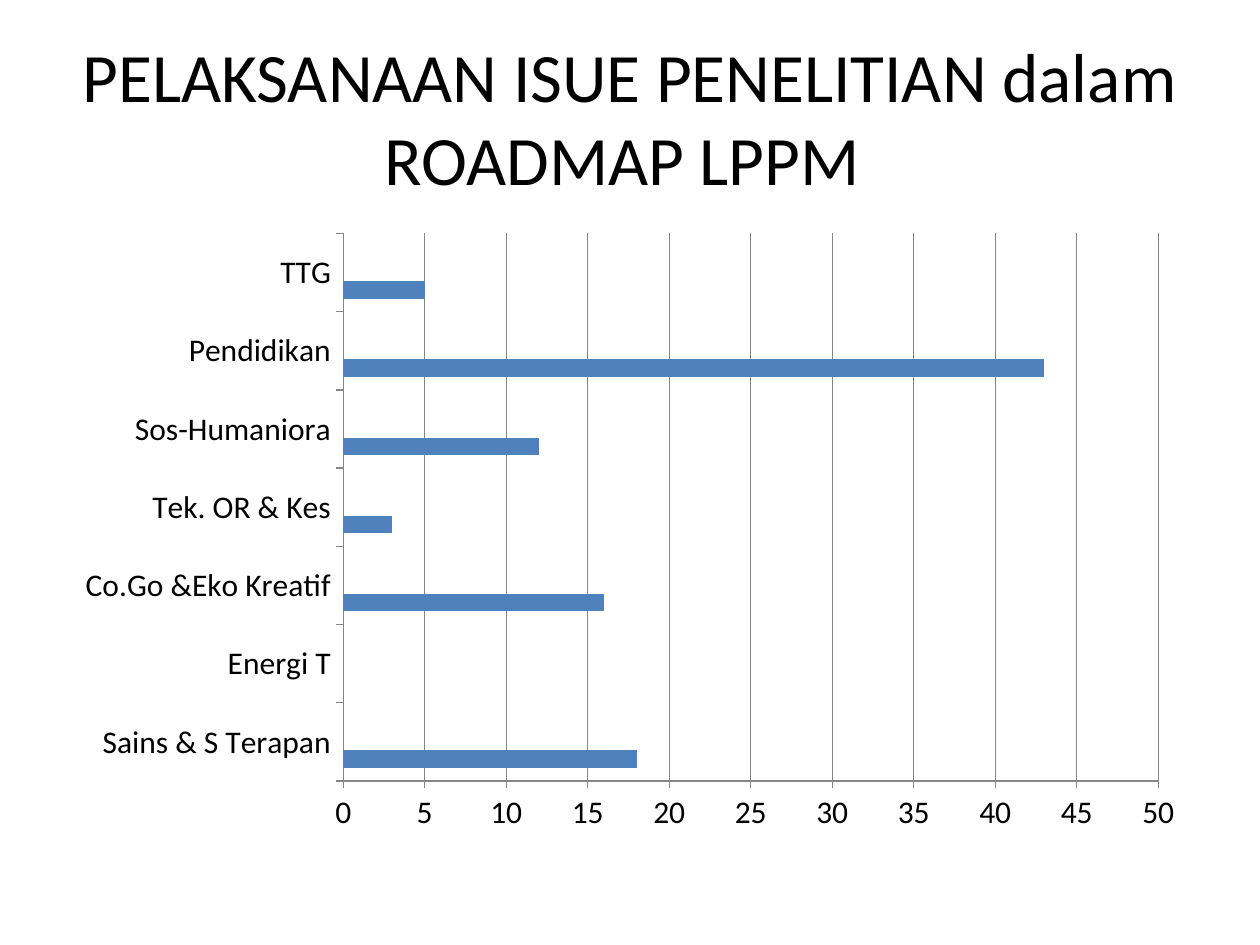
from typing import NamedTuple

import pptx
import pptx.chart.data
import pptx.dml.color
import pptx.enum.chart
import pptx.enum.text
import pptx.util

PX = 914400 // 126
FONT = "Calibri"
BLACK, GREY = "000000", "868686"


class Frame(NamedTuple):
    left: int
    top: int
    width: int
    height: int

    def emu(self) -> list[int]:
        return [length * PX for length in self]


class Issue(NamedTuple):
    label: str
    value: int


TITLE_FRAME = Frame(63, 38, 1134, 157)
CHART_FRAME = Frame(63, 221, 1134, 623)
ISSUES = [
    Issue("Sains & S Terapan", 18),
    Issue("Energi T", 0),
    Issue("Co.Go &Eko Kreatif", 16),
    Issue("Tek. OR & Kes", 3),
    Issue("Sos-Humaniora", 12),
    Issue("Pendidikan", 43),
    Issue("TTG", 5),
]
SERIES_COLOURS = ["4F81BD", "C0504D", "9BBB59"]


def colour(value: str) -> pptx.dml.color.RGBColor:
    return pptx.dml.color.RGBColor.from_string(value)


def style_font(font, size: float) -> None:
    font.name = FONT
    font.size = pptx.util.Pt(size)
    font.color.rgb = colour(BLACK)


def style_line(line) -> None:
    line.color.rgb = colour(GREY)
    line.width = pptx.util.Pt(0.75)


def add_title(slide, text: str) -> None:
    title = slide.shapes.title
    title.left, title.top, title.width, title.height = TITLE_FRAME.emu()
    frame = title.text_frame
    frame.text = text
    frame.word_wrap = True
    frame.auto_size = pptx.enum.text.MSO_AUTO_SIZE.NONE
    frame.vertical_anchor = pptx.enum.text.MSO_ANCHOR.MIDDLE
    paragraph = frame.paragraphs[0]
    paragraph.alignment = pptx.enum.text.PP_ALIGN.CENTER
    style_font(paragraph.font, 39.6)


def add_issue_chart(slide) -> None:
    """Draw the issues as bars; the second and third series hold no values."""
    issue_data = pptx.chart.data.CategoryChartData()
    issue_data.categories = [issue.label for issue in ISSUES]
    issue_data.add_series("Series 1", [issue.value for issue in ISSUES])
    for name in ("Series 2", "Series 3"):
        issue_data.add_series(name, [None] * len(ISSUES))

    chart = slide.shapes.add_chart(
        pptx.enum.chart.XL_CHART_TYPE.BAR_CLUSTERED, *CHART_FRAME.emu(), issue_data
    ).chart
    chart.has_legend = False
    chart.has_title = False
    style_font(chart.font, 18)

    bars = chart.plots[0]
    bars.gap_width = 150
    bars.overlap = 0
    bars.vary_by_categories = False
    for series, fill_colour in zip(bars.series, SERIES_COLOURS):
        series.format.fill.solid()
        series.format.fill.fore_color.rgb = colour(fill_colour)
        series.invert_if_negative = False

    for axis in (chart.category_axis, chart.value_axis):
        axis.major_tick_mark = pptx.enum.chart.XL_TICK_MARK.OUTSIDE
        style_line(axis.format.line)
    chart.category_axis.has_major_gridlines = False

    value_axis = chart.value_axis
    value_axis.minimum_scale, value_axis.maximum_scale = 0, 50
    value_axis.major_unit = 5
    value_axis.has_major_gridlines = True
    style_line(value_axis.major_gridlines.format.line)


def main() -> None:
    deck = pptx.Presentation()
    deck.slide_width = pptx.util.Inches(10)
    deck.slide_height = pptx.util.Inches(7.5)
    slide = deck.slides.add_slide(deck.slide_layouts.get_by_name("Title Only"))
    add_title(slide, "PELAKSANAAN ISUE PENELITIAN dalam ROADMAP LPPM ")
    add_issue_chart(slide)
    deck.save("out.pptx")


if __name__ == "__main__":
    main()
